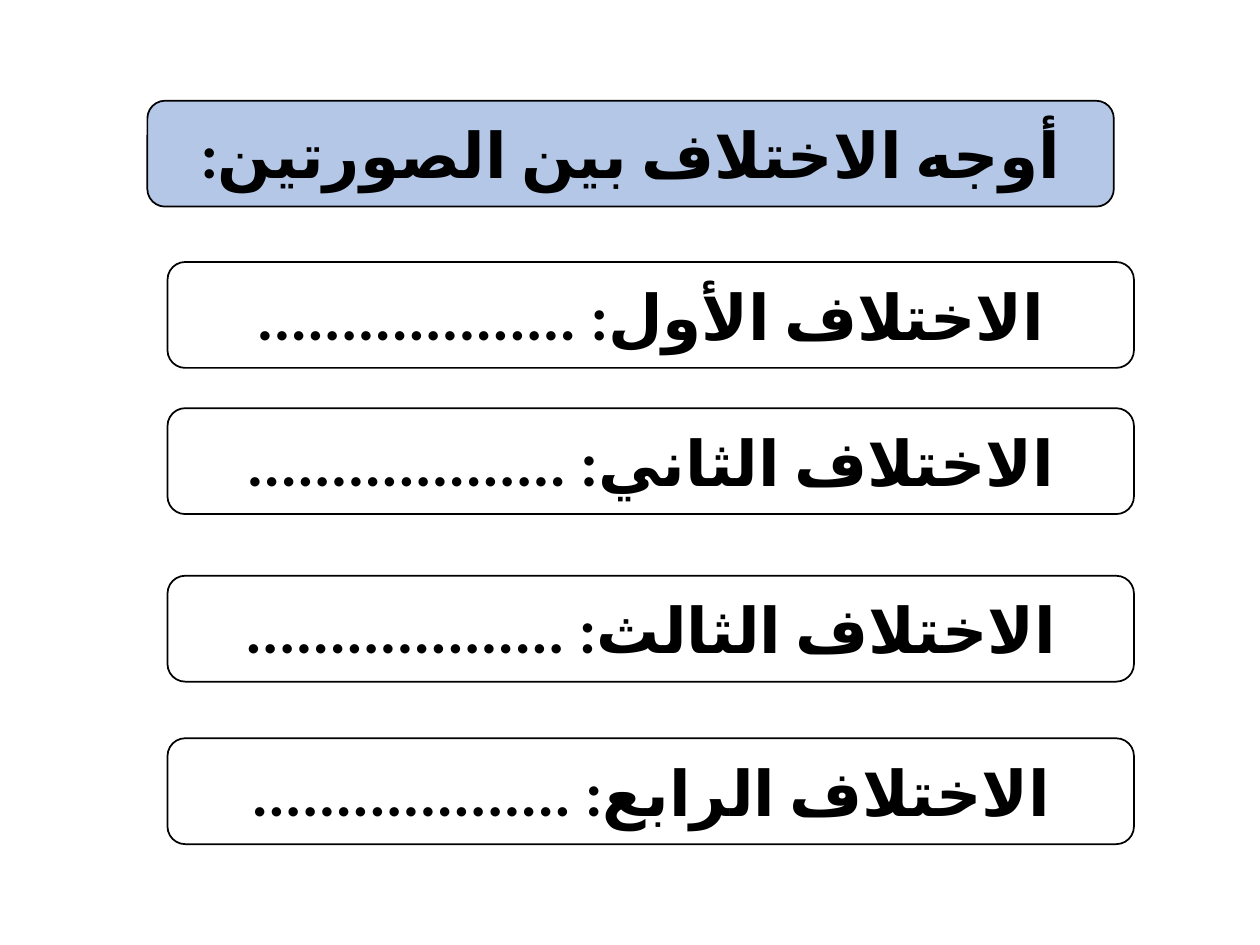
import pptx
import pptx.util
import pptx.dml.color
import pptx.enum.shapes
import pptx.enum.text
import pptx.oxml.ns
import lxml.etree

Inches = pptx.util.Inches
RGBColor = pptx.dml.color.RGBColor

BLACK = RGBColor(0x00, 0x00, 0x00)
WHITE = RGBColor(0xFF, 0xFF, 0xFF)
LIGHT_BLUE = RGBColor(0xB4, 0xC7, 0xE7)

FONT_FORMAT = {"name": "Calibri", "size": pptx.util.Pt(36), "bold": True}
BOX_WIDTH = Inches(7.67)
BOX_HEIGHT = Inches(0.84)
ANSWER_LEFT = 1.33
ANSWERS = [("الأول", 2.08), ("الثاني", 3.24), ("الثالث", 4.57), ("الرابع", 5.86)]


class SlideBuilder:
    def __init__(self, slide, font_format):
        self.slide = slide
        self.font_format = font_format

    def rounded_box(self, left, top, text, fill):
        sp = self.slide.shapes.add_shape(
            pptx.enum.shapes.MSO_SHAPE.ROUNDED_RECTANGLE,
            Inches(left), Inches(top), BOX_WIDTH, BOX_HEIGHT)
        sp.shadow.inherit = False
        sp.fill.solid()
        sp.fill.fore_color.rgb = fill
        sp.line.color.rgb = BLACK
        sp.line.width = pptx.util.Pt(1)
        tf = sp.text_frame
        tf.word_wrap = True
        tf.vertical_anchor = pptx.enum.text.MSO_ANCHOR.MIDDLE
        self.rtl_text(tf.paragraphs[0], text)

    def rtl_text(self, p, text):
        p.alignment = pptx.enum.text.PP_ALIGN.CENTER
        p._p.get_or_add_pPr().set("rtl", "1")
        r = p.add_run()
        r.text = text
        for name, value in self.font_format.items():
            setattr(r.font, name, value)
        r.font.color.rgb = BLACK
        rPr = r._r.get_or_add_rPr()
        rPr.set("lang", "ar-SA")
        cs = lxml.etree.SubElement(rPr, pptx.oxml.ns.qn("a:cs"))
        cs.set("typeface", self.font_format["name"])


def main():
    prs = pptx.Presentation()
    prs.slide_width = Inches(10)
    prs.slide_height = Inches(7.5)
    s = SlideBuilder(prs.slides.add_slide(prs.slide_layouts[6]), FONT_FORMAT)
    s.rounded_box(1.17, 0.8, "أوجه الاختلاف بين الصورتين:", LIGHT_BLUE)
    for ordinal, top in ANSWERS:
        s.rounded_box(ANSWER_LEFT, top, f"الاختلاف {ordinal}: " + "." * 19, WHITE)
    prs.save("out.pptx")


if __name__ == "__main__":
    main()
